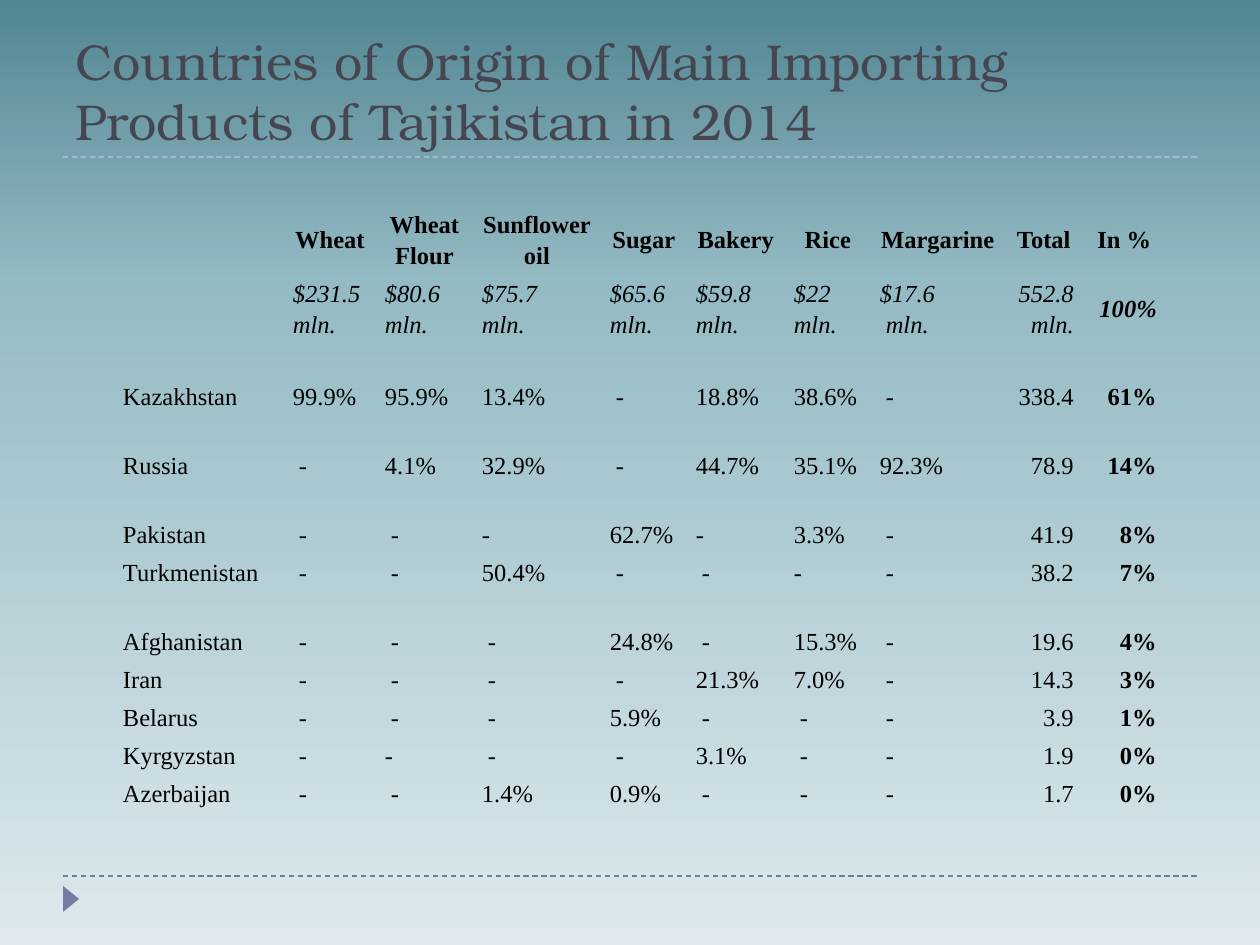
from copy import deepcopy
from lxml import etree
from pptx import Presentation, util as u
from pptx.dml.color import RGBColor
from pptx.enum import dml, shapes, text
from pptx.oxml.ns import qn

PX = 914400 // 126
LEFT, MID, RIGHT = text.PP_ALIGN.LEFT, text.PP_ALIGN.CENTER, text.PP_ALIGN.RIGHT


def hue(code):
    return RGBColor.from_string(code)


def write(frame, words, font="Times New Roman", size=14, color="000000",
          bold=False, slant=False, align=LEFT, space=1.15, dents=()):
    frame.word_wrap = True
    for i, line in enumerate(words.split("/")):
        para = frame.add_paragraph() if i else frame.paragraphs[0]
        para.alignment, para.line_spacing = align, space
        if i in dents:
            para._p.get_or_add_pPr().set("marL", str(6 * PX))
        run = para.add_run()
        run.text = line
        face = run.font
        face.name, face.size, face.bold, face.italic = font, u.Pt(size), bold, slant
        face.color.rgb = hue(color)


deck = Presentation()
deck.slide_width, deck.slide_height = 1260 * PX, 945 * PX
slide = deck.slides.add_slide(deck.slide_layouts[6])

back = slide.background.fill
back.gradient()
back.gradient_angle = 270
stops = slide.element.find(".//" + qn("a:gsLst"))
stops.insert(1, deepcopy(stops[0]))
for stop, (place, code) in zip(back.gradient_stops,
                               [(0, "528693"), (0.3, "94BAC3"), (1, "DDE9EC")]):
    stop.position = place
    stop.color.rgb = hue(code)

for y, code in [(876, "727CA3"), (157, "9FB8CD")]:
    rule = slide.shapes.add_connector(shapes.MSO_CONNECTOR.STRAIGHT,
                                      63 * PX, y * PX, 1197 * PX, y * PX)
    rule.line.color.rgb = hue(code)
    rule.line.width = u.Pt(0.75)
    rule.line.dash_style = dml.MSO_LINE.DASH
    etree.SubElement(rule._element.spPr, qn("a:effectLst"))

mark = slide.shapes.add_shape(shapes.MSO_SHAPE.ISOSCELES_TRIANGLE,
                              58 * PX, 891 * PX, 26 * PX, 16 * PX)
mark.rotation = 90
mark.shadow.inherit = False
mark.fill.solid()
mark.fill.fore_color.rgb = hue("727CA3")
mark.line.fill.background()

title = slide.shapes.add_textbox(63 * PX, 21 * PX, 1134 * PX, 136 * PX).text_frame
title.vertical_anchor = text.MSO_ANCHOR.BOTTOM
write(title, "Countries of Origin of Main Importing Products of Tajikistan in 2014",
      font="TeX Gyre Bonum", size=28.8, color="464653", space=1)

rows = [
    "|Wheat|Wheat Flour|Sunflower oil|Sugar|Bakery|Rice|Margarine|Total|In %",
    "|$231.5 mln.|$80.6 mln.|$75.7/mln.|$65.6 mln.|$59.8 mln.|$22 mln.|$17.6/mln.|552.8 mln.|100%",
    "Kazakhstan|99.9%|95.9%|13.4%|-|18.8%|38.6%|-|338.4|61%",
    "Russia|-|4.1%|32.9%|-|44.7%|35.1%|92.3%|78.9|14%",
    "Pakistan|-|-|-|62.7%|-|3.3%|-|41.9|8%",
    "Turkmenistan|-|-|50.4%|-|-|-|-|38.2|7%",
    "Afghanistan|-|-|-|24.8%|-|15.3%|-|19.6|4%",
    "Iran|-|-|-|-|21.3%|7.0%|-|14.3|3%",
    "Belarus|-|-|-|5.9%|-|-|-|3.9|1%",
    "Kyrgyzstan|-|-|-|-|3.1%|-|-|1.9|0%",
    "Azerbaijan|-|-|1.4%|0.9%|-|-|-|1.7|0%",
]
wides = [170, 92, 97, 128, 86, 98, 86, 134, 78, 83]
short = {5, 7, 8, 9, 10}
flush = {(4, 3), (4, 5), (5, 6), (9, 2)}
highs = [38 if r in short else 69 for r in range(len(rows))]

frame = slide.shapes.add_table(len(rows), len(wides), 114 * PX, 204 * PX,
                               sum(wides) * PX, sum(highs) * PX)
table = frame.table
table.first_row = table.horz_banding = False
style = frame._element.find(".//" + qn("a:tableStyleId"))
style.text = "{2D5ABB26-0587-4C30-8999-92F81FD0307C}"
for col, wide in zip(table.columns, wides):
    col.width = wide * PX

for r, row in enumerate(rows):
    table.rows[r].height = highs[r] * PX
    for c, words in enumerate(row.split("|")):
        cell = table.cell(r, c)
        cell.fill.background()
        cell.margin_left = cell.margin_right = 9 * PX
        cell.margin_top = cell.margin_bottom = 0
        cell.vertical_anchor = text.MSO_ANCHOR.MIDDLE if r < 2 else text.MSO_ANCHOR.BOTTOM
        if not words:
            continue
        dents = ()
        if words == "-" and (r, c) not in flush:
            dents = (0,)
        elif (r, c) == (1, 7):
            dents = (1,)
        write(cell.text_frame, words, bold=r == 0 or c == 9, slant=r == 1,
              align=MID if r == 0 else RIGHT if c > 7 else LEFT, dents=dents)

deck.save("out.pptx")
